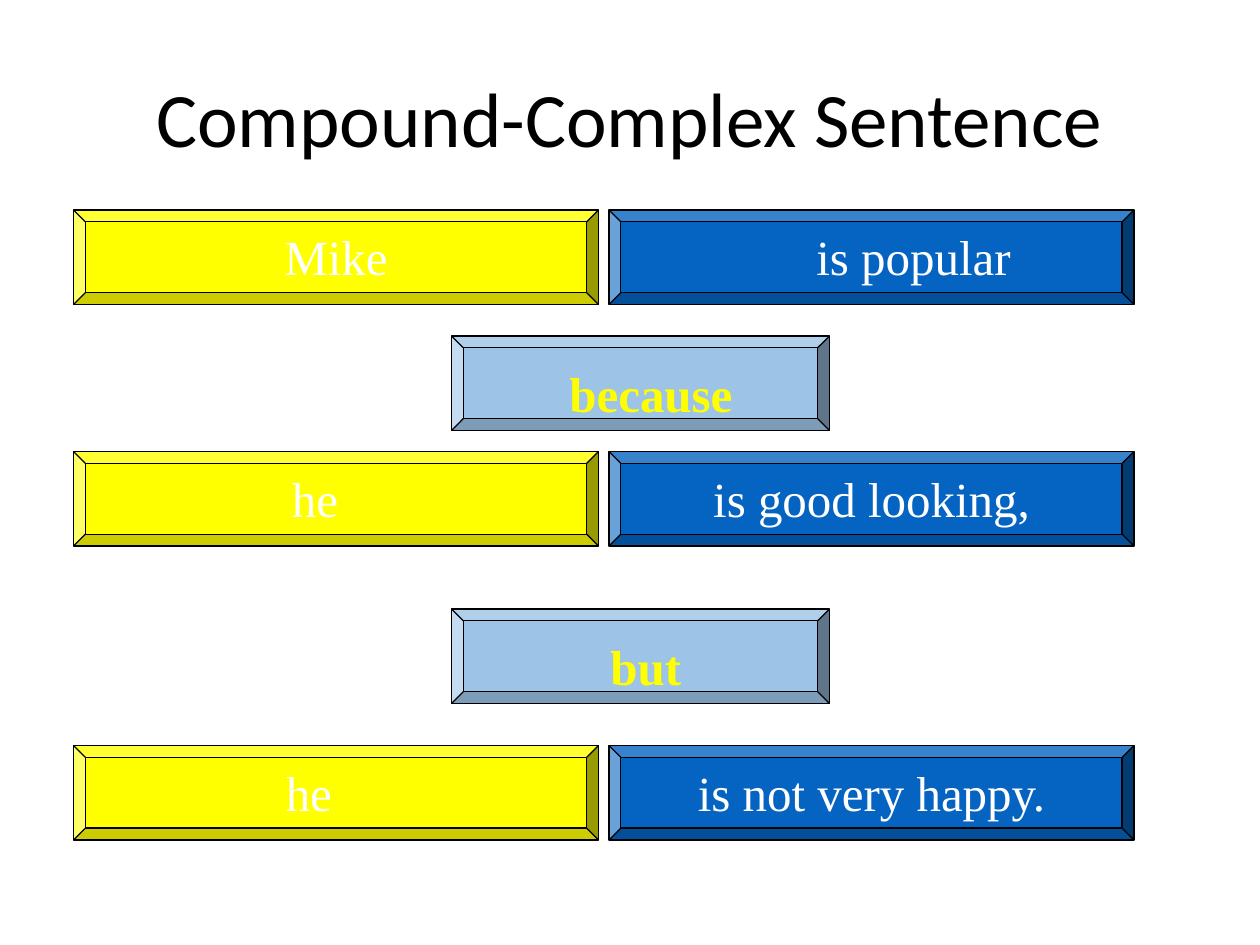
from dataclasses import dataclass

from pptx import Presentation
from pptx.dml.color import RGBColor
from pptx.enum.shapes import MSO_SHAPE
from pptx.enum.text import MSO_ANCHOR, PP_ALIGN
from pptx.slide import Slide
from pptx.util import Pt

BEVEL = MSO_SHAPE.BEVEL
CENTER = PP_ALIGN.CENTER
MIDDLE = MSO_ANCHOR.MIDDLE

COLORS = {
    "subject": "FFFF00",
    "predicate": "0563C1",
    "conjunction": "9DC3E6",
    "line": "000000",
    "title": "000000",
    "clause_text": "FFFFFF",
    "conjunction_text": "FFFF00",
}
BLOCK_H = 54
LABEL_H = 41


@dataclass
class BlockStyle:
    left: float
    width: float
    fill: str
    color: str
    label_drop: float
    bold: bool = False


@dataclass
class Block:
    style: BlockStyle
    top: float
    text: str
    label_left: float
    label_width: float = 264


SUBJECT = BlockStyle(42, 300, "subject", "clause_text", 6)
PREDICATE = BlockStyle(348, 300, "predicate", "clause_text", 6)
CONJUNCTION = BlockStyle(258, 216, "conjunction", "conjunction_text", 12, True)

BLOCKS = [
    Block(SUBJECT, 120, "Mike", 60),
    Block(PREDICATE, 120, "is popular", 390),
    Block(CONJUNCTION, 192, "because", 300, 144),
    Block(SUBJECT, 258, "he", 48),
    Block(PREDICATE, 258, "is good looking,", 366),
    Block(CONJUNCTION, 348, "but", 318, 102),
    Block(SUBJECT, 426, "he ", 48),
    Block(PREDICATE, 426, "is not very happy.", 366),
]


def rgb(name: str) -> RGBColor:
    return RGBColor.from_string(COLORS[name])


def set_text(sp, text: str, font: str, size: float, color: str, bold: bool = False) -> None:
    tf = sp.text_frame
    tf.text = text
    tf.word_wrap = True
    p = tf.paragraphs[0]
    p.alignment = CENTER
    r = p.runs[0]
    r.font.name = font
    r.font.size = Pt(size)
    r.font.bold = bold
    r.font.color.rgb = rgb(color)


def add_title(s: Slide, text: str) -> None:
    sp = s.shapes.title
    sp.left, sp.top, sp.width, sp.height = Pt(36), Pt(21.6), Pt(648), Pt(90)
    set_text(sp, text, "Calibri", 44, "title")
    sp.text_frame.vertical_anchor = MIDDLE


def add_block(s: Slide, block: Block) -> None:
    style = block.style
    sp = s.shapes.add_shape(BEVEL, Pt(style.left), Pt(block.top), Pt(style.width), Pt(BLOCK_H))
    sp.shadow.inherit = False
    sp.fill.solid()
    sp.fill.fore_color.rgb = rgb(style.fill)
    sp.line.color.rgb = rgb("line")
    sp.line.width = Pt(0.75)
    label = s.shapes.add_textbox(
        Pt(block.label_left), Pt(block.top + style.label_drop), Pt(block.label_width), Pt(LABEL_H)
    )
    set_text(label, block.text, "Times New Roman", 28, style.color, style.bold)


def main() -> None:
    prs = Presentation()
    prs.slide_width, prs.slide_height = Pt(720), Pt(540)
    s = prs.slides.add_slide(prs.slide_layouts[5])
    add_title(s, "Compound-Complex Sentence")
    for block in BLOCKS:
        add_block(s, block)
    prs.save("out.pptx")


if __name__ == "__main__":
    main()
